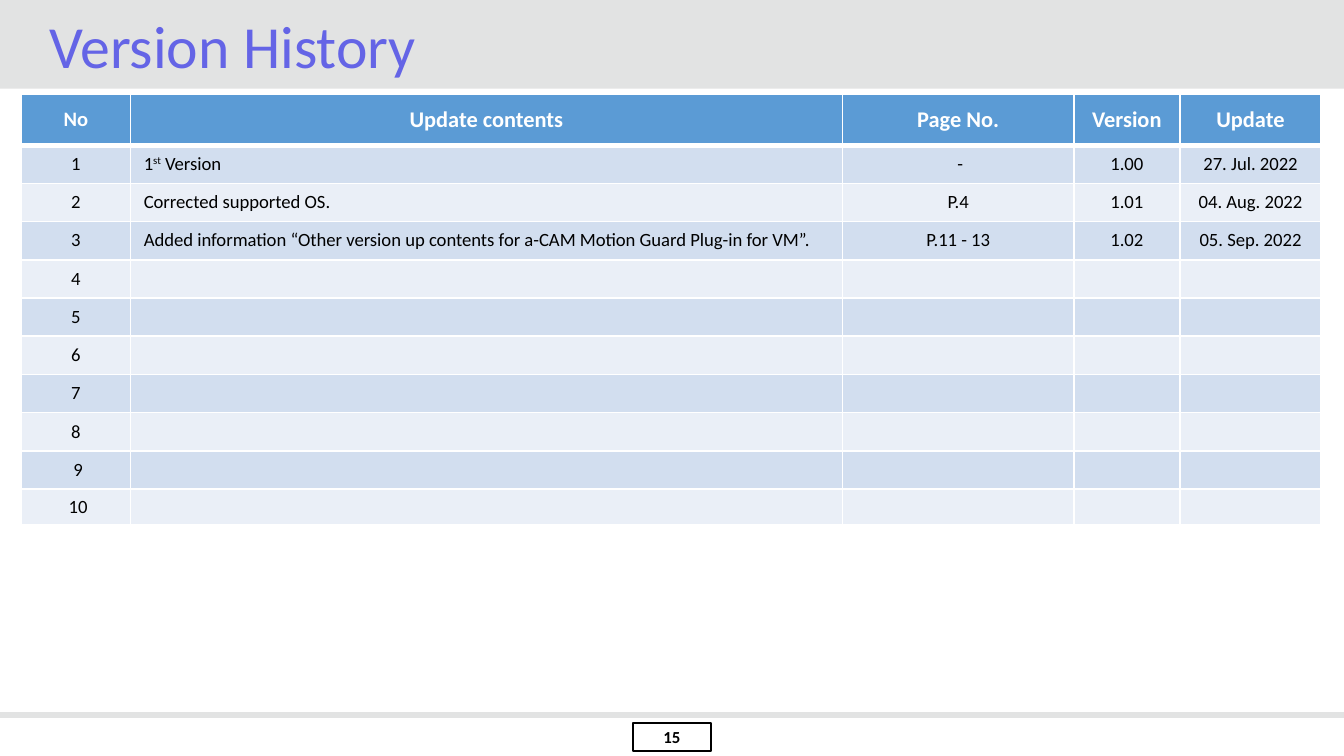
from lxml import etree
from pptx import Presentation
from pptx.dml.color import RGBColor
from pptx.enum.shapes import MSO_CONNECTOR, MSO_SHAPE
from pptx.enum.text import MSO_ANCHOR, PP_ALIGN
from pptx.oxml.ns import qn
from pptx.util import Inches, Pt

# Content
TITLE = "Version History"
PAGE = "15"
HEADERS = ["No", "Update contents", "Page No.", "Version", "Update"]
UPDATES = [
    ["1", "1st Version", " -", "1.00", "27. Jul. 2022"],
    ["2", "Corrected supported OS.", "P.4", "1.01", "04. Aug. 2022"],
    ["3", "Added information “Other version up contents for a-CAM Motion Guard Plug-in for VM”.",
     "P.11 - 13", "1.02", "05. Sep. 2022"],
]
EMPTY_NUMBERS = ["4", "5", "6", "7", "8", " 9", " 10"]
ROWS = [HEADERS] + UPDATES + [[n, "", "", "", ""] for n in EMPTY_NUMBERS]

# Layout and colours
SLIDE_W = 10
SLIDE_H = SLIDE_W * 9 / 16
COL_WIDTHS = [0.81, 5.3, 1.72, 0.79, 1.05]
TABLE_H, HEADER_H, LAST_H = 3.2, 0.38, 0.26
BODY_H = (TABLE_H - HEADER_H - LAST_H) / (len(ROWS) - 2)
ROW_HEIGHTS = [HEADER_H] + [BODY_H] * (len(ROWS) - 2) + [LAST_H]
GREY, WHITE, BLACK, VIOLET = "E2E3E3", "FFFFFF", "000000", "6464E6"
HEADER_FILL, BANDS = "5B9BD5", ["EAEFF7", "D2DEEF"]


def rgb(color):
    return RGBColor.from_string(color)


def set_font(font, size, color, bold=False):
    font.name, font.size, font.bold = "Calibri", Pt(size), bold
    font.color.rgb = rgb(color)


def set_margins(tf, left, top, right, bottom):
    tf.margin_left, tf.margin_top = Inches(left), Inches(top)
    tf.margin_right, tf.margin_bottom = Inches(right), Inches(bottom)
    tf.vertical_anchor, tf.word_wrap = MSO_ANCHOR.MIDDLE, True


def set_borders(cell, top, bottom):
    tcPr = cell._tc.get_or_add_tcPr()
    for side, width in (("L", 1), ("R", 1), ("T", top), ("B", bottom)):
        ln = etree.SubElement(tcPr, qn(f"a:ln{side}"), w=str(Pt(width)))
        fill = etree.SubElement(ln, qn("a:solidFill"))
        etree.SubElement(fill, qn("a:srgbClr"), val=WHITE)


def add_text(p, text):
    """Write the text, raising the ordinal ending of "1st"."""
    if not text.startswith("1st"):
        p.add_run().text = text
        return
    for part in ("1", "st", text[3:]):
        r = p.add_run()
        r.text = part
        if part == "st":
            r._r.get_or_add_rPr().set("baseline", "30000")


prs = Presentation()
prs.slide_width, prs.slide_height = Inches(SLIDE_W), Inches(SLIDE_H)
s = prs.slides.add_slide(prs.slide_layouts[6])

# Title band
band = s.shapes.add_shape(MSO_SHAPE.RECTANGLE, 0, 0, Inches(SLIDE_W), Inches(0.66))
band.shadow.inherit = False
band.fill.solid()
band.fill.fore_color.rgb = rgb(GREY)
band.line.fill.background()

# Footer line
rule = s.shapes.add_connector(MSO_CONNECTOR.STRAIGHT, 0, Inches(5.32), Inches(SLIDE_W), Inches(5.32))
rule.line.color.rgb = rgb(GREY)
rule.line.width = Pt(3)
etree.SubElement(rule._element.spPr, qn("a:effectLst"))

# Page number
box = s.shapes.add_shape(MSO_SHAPE.RECTANGLE, Inches(4.71), Inches(5.38), Inches(0.58), Inches(0.21))
box.shadow.inherit = False
box.fill.background()
box.line.color.rgb = rgb(BLACK)
box.line.width = Pt(1)
set_margins(box.text_frame, 0.03, 0.03, 0.03, 0.03)
p = box.text_frame.paragraphs[0]
p.text, p.alignment = PAGE, PP_ALIGN.CENTER
set_font(p.font, 9, BLACK, True)

# Title
title = s.shapes.add_textbox(Inches(0.27), Inches(0.01), Inches(9.46), Inches(0.66))
set_margins(title.text_frame, 0.1, 0.05, 0.1, 0)
p = title.text_frame.paragraphs[0]
p.text, p.line_spacing = TITLE, 0.9
set_font(p.font, 32, VIOLET)

# Version table
table = s.shapes.add_table(len(ROWS), len(HEADERS), Inches(0.16), Inches(0.7),
                           Inches(sum(COL_WIDTHS)), Inches(TABLE_H)).table
table.horz_banding = False
for col, width in zip(table.columns, COL_WIDTHS):
    col.width = Inches(width)
for row, height in zip(table.rows, ROW_HEIGHTS):
    row.height = Inches(height)

for i, texts in enumerate(ROWS):
    header = i == 0
    for j, text in enumerate(texts):
        cell = table.cell(i, j)
        cell.vertical_anchor = MSO_ANCHOR.MIDDLE
        set_borders(cell, 3 if i == 1 else 1, 3 if header else 1)
        cell.fill.solid()
        cell.fill.fore_color.rgb = rgb(HEADER_FILL if header else BANDS[i % 2])
        p = cell.text_frame.paragraphs[0]
        if header or j != 1:
            p.alignment = PP_ALIGN.CENTER
        size = 10 if not header else 11 if j == 0 else 12
        set_font(p.font, size, WHITE if header else BLACK, header)
        if text:
            add_text(p, text)
        else:  # keeps the empty row at its height
            etree.SubElement(p._p, qn("a:endParaRPr"), sz="1000")

prs.save("out.pptx")
